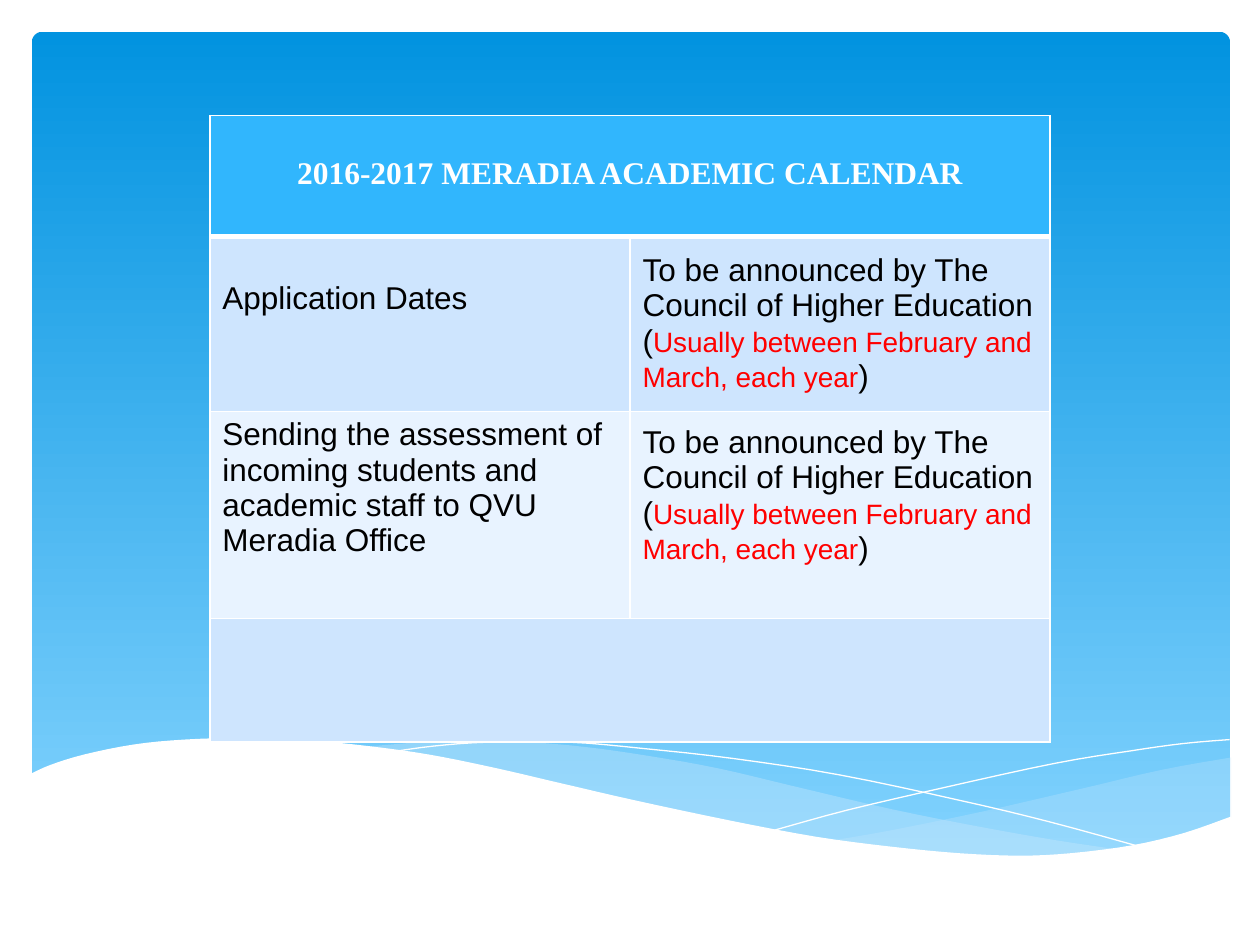
from dataclasses import dataclass
from typing import Optional

from lxml.etree import SubElement
from pptx import Presentation
from pptx.dml.color import RGBColor
from pptx.enum.shapes import MSO_SHAPE
from pptx.enum.text import MSO_ANCHOR, PP_ALIGN
from pptx.oxml.ns import qn
from pptx.util import Cm, Pt

WHITE = RGBColor(0xFF, 0xFF, 0xFF)
BLACK = RGBColor(0, 0, 0)
RED = RGBColor(0xFF, 0, 0)
SKY_TOP = RGBColor(0x02, 0x93, 0xE0)
SKY_BOTTOM = RGBColor(0x83, 0xD3, 0xFE)
WAVE = RGBColor(0xC6, 0xE7, 0xFC)
HEADER = RGBColor(0x31, 0xB6, 0xFD)
BAND_DARK = RGBColor(0xCE, 0xE5, 0xFE)
BAND_LIGHT = RGBColor(0xE8, 0xF3, 0xFF)

TITLE = {"size": Pt(18), "name": "Times New Roman", "bold": True, "color": WHITE}
BODY = {"size": Pt(18), "name": "Arial", "bold": False, "color": BLACK}
NOTE = BODY | {"size": Pt(16), "color": RED}

Point = tuple[float, float]


@dataclass
class Wave:
    edges: list[list[Point]]  # smooth edges through knots, in cm
    fill: Optional[RGBColor] = None  # without a fill it is a thin white line
    opacity: int = 100


@dataclass
class Entry:
    row: int
    col: int
    paragraphs: list[list[tuple[str, dict]]]
    anchor: MSO_ANCHOR = MSO_ANCHOR.TOP
    align: PP_ALIGN = PP_ALIGN.LEFT
    top: float = 0.11
    bottom: float = 0.13


WAVES = [
    Wave([[(24.82, 15.27), (23.42, 15.52), (21.89, 15.88), (19.81, 16.36),
           (17.96, 16.74), (16.81, 16.94)],
          [(16.81, 16.94), (18.26, 17.12), (19.56, 17.25), (20.7, 17.27),
           (21.95, 17.2), (23.22, 16.99), (24.16, 16.74), (24.82, 16.48)]], WAVE, 29),
    Wave([[(22.71, 17.15), (21.29, 16.94), (19.71, 16.66), (17.96, 16.31), (16, 15.85),
           (14.48, 15.49), (13.08, 15.24), (11.81, 15.06), (10.67, 14.96),
           (9.65, 14.91), (8.76, 14.94), (7.29, 15.06)],
          [(7.29, 15.06), (8.71, 15.27), (10.29, 15.57), (11.43, 15.85), (13.46, 16.31),
           (15.29, 16.69), (16.92, 16.97), (18.36, 17.17), (19.66, 17.25),
           (20.8, 17.27), (21.82, 17.25), (22.71, 17.15)]], WAVE, 40),
    Wave([[(7.87, 15.16), (8.74, 15.04), (9.86, 14.96), (11.46, 14.96), (12.98, 15.09),
           (14.78, 15.29), (16.92, 15.62), (19.33, 16.13), (21.13, 16.56),
           (23.06, 17.09)]]),
    Wave([[(15.6, 16.74), (17.09, 16.33), (19.02, 15.88), (21.26, 15.39),
           (22.78, 15.14), (23.85, 14.99), (24.79, 14.91)]]),
    Wave([[(24.82, 16.46), (23.88, 16.79), (22.83, 17.04), (21.59, 17.2), (20.55, 17.25),
           (19.33, 17.2), (17.98, 17.07), (16.46, 16.87), (14.71, 16.54),
           (12.78, 16.13), (11.35, 15.8), (9.93, 15.47), (8.64, 15.21), (7.42, 15.04),
           (6.35, 14.94), (4.9, 14.88), (3.71, 14.91), (2.69, 15.01), (1.7, 15.21),
           (1.02, 15.42), (0.58, 15.62)],
          [(0.58, 18.57), (24.82, 18.57)]], WHITE),
]

ANNOUNCED = [
    [("To be announced by The Council of Higher Education", BODY)],
    [("(", BODY), ("Usually between February and March, each year", NOTE), (")", BODY)],
]
ENTRIES = [
    Entry(0, 0, [[("2016-2017 MERADIA ACADEMIC CALENDAR", TITLE)]],
          MSO_ANCHOR.MIDDLE, PP_ALIGN.CENTER, bottom=0.2),
    Entry(1, 0, [[("Application Dates", BODY)]], top=0.9),
    Entry(1, 1, ANNOUNCED, MSO_ANCHOR.MIDDLE),
    Entry(2, 0, [[("Sending the assessment of incoming students and academic staff "
                   "to QVU Meradia Office", BODY)]]),
    Entry(2, 1, ANNOUNCED, MSO_ANCHOR.MIDDLE, bottom=0.9),
]
ROW_HEIGHTS = [2.44, 3.53, 4.17, 2.49]
ROW_FILLS = [HEADER, BAND_DARK, BAND_LIGHT, BAND_DARK]
COLUMN_WIDTH = 8.47


def smooth(knots: list[Point], steps: int = 4) -> list[Point]:
    """Catmull-Rom curve through the knots."""
    padded = [knots[0], *knots, knots[-1]]
    curve = []
    for a, b, c, d in zip(padded, padded[1:], padded[2:], padded[3:]):
        for t in (i / steps for i in range(steps)):
            curve.append(tuple(
                q + t * (r - p) / 2 + t**2 * (2 * p - 5 * q + 4 * r - s) / 2
                + t**3 * (3 * q - p - 3 * r + s) / 2
                for p, q, r, s in zip(a, b, c, d)))
    return curve + [knots[-1]]


def draw_wave(s, wave: Wave) -> None:
    points = [(Cm(x), Cm(y)) for edge in wave.edges for x, y in smooth(edge)]
    builder = s.shapes.build_freeform(*points[0])
    builder.add_line_segments(points[1:], close=wave.fill is not None)
    sp = builder.convert_to_shape()
    sp.shadow.inherit = False
    if wave.fill is None:
        sp.fill.background()
        sp.line.color.rgb = WHITE
        sp.line.width = Pt(0)
        return
    sp.fill.solid()
    sp.fill.fore_color.rgb = wave.fill
    sp.line.fill.background()
    if wave.opacity < 100:
        color = sp.fill._xPr.find(qn("a:solidFill"))[0]
        SubElement(color, qn("a:alpha"), val=str(wave.opacity * 1000))


def set_border(cell, side: str, width: float) -> None:
    ln = SubElement(cell._tc.get_or_add_tcPr(), qn(f"a:ln{side}"), w=str(Pt(width)))
    SubElement(SubElement(ln, qn("a:solidFill")), qn("a:srgbClr"), val=str(WHITE))


def write_entry(table, entry: Entry) -> None:
    cell = table.cell(entry.row, entry.col)
    cell.vertical_anchor = entry.anchor
    cell.margin_top, cell.margin_bottom = Cm(entry.top), Cm(entry.bottom)
    tf = cell.text_frame
    for i, runs in enumerate(entry.paragraphs):
        p = tf.add_paragraph() if i else tf.paragraphs[0]
        p.alignment = entry.align
        for text, style in runs:
            r = p.add_run()
            r.text = text
            for key, value in style.items():
                if key == "color":
                    r.font.color.rgb = value
                else:
                    setattr(r.font, key, value)


def draw_background(s) -> None:
    sp = s.shapes.add_shape(MSO_SHAPE.ROUNDED_RECTANGLE,
                            Cm(0.64), Cm(0.64), Cm(24.16), Cm(16.76))
    sp.adjustments[0] = 0.013
    sp.shadow.inherit = False
    sp.line.fill.background()
    sp.fill.gradient()
    sp.fill.gradient_angle = 270
    for stop, color, position in zip(sp.fill.gradient_stops, (SKY_TOP, SKY_BOTTOM), (0, 1)):
        stop.color.rgb = color
        stop.position = position


def draw_calendar(s) -> None:
    table = s.shapes.add_table(len(ROW_HEIGHTS), 2, Cm(4.23), Cm(2.33),
                               Cm(2 * COLUMN_WIDTH), Cm(sum(ROW_HEIGHTS))).table
    for column in table.columns:
        column.width = Cm(COLUMN_WIDTH)
    for i, (height, fill) in enumerate(zip(ROW_HEIGHTS, ROW_FILLS)):
        table.rows[i].height = Cm(height)
        for cell in table.rows[i].cells:
            for side in "LRTB":
                under_header = (i, side) in ((0, "B"), (1, "T"))
                set_border(cell, side, 3 if under_header else 1)
            cell.fill.solid()
            cell.fill.fore_color.rgb = fill
    # Header and closing rows span both columns
    for i in (0, len(ROW_HEIGHTS) - 1):
        table.cell(i, 0).merge(table.cell(i, 1))
    for entry in ENTRIES:
        write_entry(table, entry)


def main() -> None:
    prs = Presentation()
    prs.slide_width, prs.slide_height = Cm(25.4), Cm(19.05)
    s = prs.slides.add_slide(prs.slide_layouts[6])
    draw_background(s)
    for wave in WAVES:
        draw_wave(s, wave)
    draw_calendar(s)
    prs.save("out.pptx")


if __name__ == "__main__":
    main()
